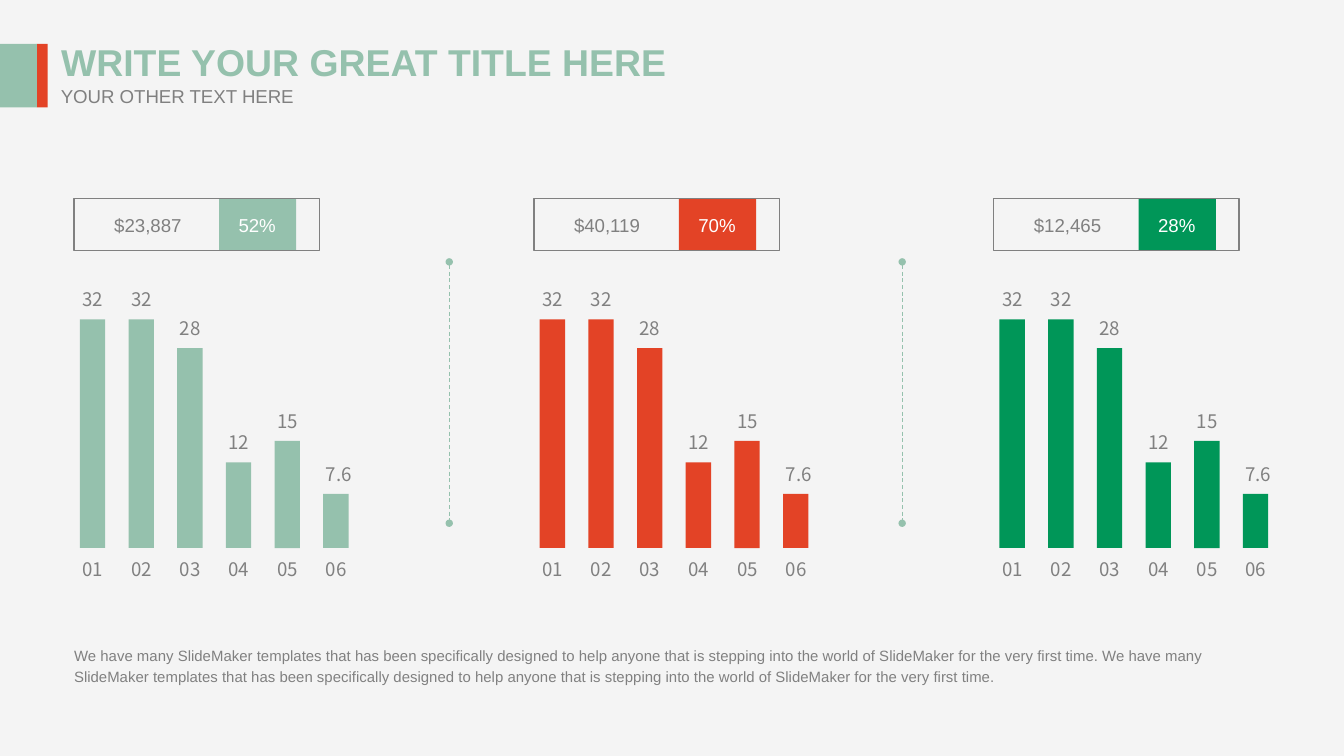
from lxml.etree import SubElement
from pptx import Presentation
from pptx.dml.color import RGBColor
from pptx.enum.dml import MSO_LINE_DASH_STYLE as Dash
from pptx.enum.shapes import MSO_CONNECTOR as Connector, MSO_SHAPE as Shape
from pptx.enum.text import MSO_ANCHOR as Anchor, MSO_AUTO_SIZE as AutoSize, PP_ALIGN as Align
from pptx.oxml.ns import qn
from pptx.util import Cm, Pt

SAGE = RGBColor(0x95, 0xC1, 0xAD)
RED = RGBColor(0xE3, 0x43, 0x26)
GREEN = RGBColor(0x00, 0x96, 0x58)
GRAY = RGBColor(0x80, 0x80, 0x80)
WHITE = RGBColor(0xFF, 0xFF, 0xFF)
BACKGROUND = RGBColor(0xF4, 0xF4, 0xF4)

TITLE = "WRITE YOUR GREAT TITLE HERE"
SUBTITLE = "YOUR OTHER TEXT HERE"
NOTE = (
    "We have many SlideMaker templates that has been specifically designed to help anyone "
    "that is stepping into the world of SlideMaker for the very first time. "
    "We have many SlideMaker templates that has been specifically designed to help anyone "
    "that is stepping into the world of SlideMaker for the very first time."
)
PANELS = [("$23,887", "52%", SAGE), ("$40,119", "70%", RED), ("$12,465", "28%", GREEN)]
BARS = [("01", 32), ("02", 32), ("03", 28), ("04", 12), ("05", 15), ("06", 7.6)]

TITLE_FONT = {"name": "Arial", "size": Pt(20), "bold": True}
BODY_FONT = {"name": "Arial", "size": Pt(10)}
NOTE_FONT = {"name": "Arial", "size": Pt(8)}
LABEL_FONT = {"name": "Noto Sans CJK SC", "size": Pt(10)}
NO_MARGINS = dict.fromkeys(("margin_left", "margin_top", "margin_right", "margin_bottom"), 0)

# Layout, in centimetres
MARGIN, PANEL_PITCH = 1.4, 8.69
BADGE_TOP, BADGE_HEIGHT = 3.75, 0.99
BAR_INSET, BAR_PITCH, BAR_WIDTH = 0.11, 0.92, 0.48
BASELINE, UNIT_HEIGHT = 10.36, 0.135
VALUE_GAP, CATEGORY_GAP = 0.59, 0.18
DIVIDERS, DIVIDER_TOP, DIVIDER_BOTTOM = (8.49, 17.05), 4.95, 9.89
ACCENTS = [(0.7, 0.2, RED), (0, 0.7, SAGE)]


def set_attributes(target, values):
    for name, value in values.items():
        setattr(target, name, value)


def write(shape, text, font, color, align=Align.LEFT, wrap=False, **frame_format):
    frame = shape.text_frame
    set_attributes(frame, {"word_wrap": wrap, "auto_size": AutoSize.SHAPE_TO_FIT_TEXT,
                           "vertical_anchor": Anchor.TOP, **frame_format})
    frame.text = text
    paragraph = frame.paragraphs[0]
    paragraph.alignment = align
    run_font = paragraph.runs[0].font
    set_attributes(run_font, font)
    run_font.color.rgb = color
    return paragraph


def add_text(slide, box, *content, **options):
    shape = slide.shapes.add_textbox(*map(Cm, box))
    return write(shape, *content, **options)


def add_rectangle(shapes, box, fill=None, line=None):
    shape = shapes.add_shape(Shape.RECTANGLE, *map(Cm, box))
    shape.shadow.inherit = False
    if fill is None:
        shape.fill.background()
    else:
        shape.fill.solid()
        shape.fill.fore_color.rgb = fill
    if line is None:
        shape.line.fill.background()
    else:
        shape.line.color.rgb = line
        shape.line.width = Pt(0.75)


def add_divider(slide, x):
    divider = slide.shapes.add_connector(
        Connector.STRAIGHT, Cm(x), Cm(DIVIDER_TOP), Cm(x), Cm(DIVIDER_BOTTOM))
    divider.line.color.rgb = SAGE
    set_attributes(divider.line, {"width": Pt(0.5), "dash_style": Dash.DASH})
    line = divider.line._get_or_add_ln()
    for end in ("a:headEnd", "a:tailEnd"):
        SubElement(line, qn(end), type="oval", w="sm", len="sm")
    SubElement(divider._element.spPr, qn("a:effectLst"))


def add_bars(slide, left, color):
    for index, (category, value) in enumerate(BARS):
        x = left + BAR_INSET + index * BAR_PITCH
        height = value * UNIT_HEIGHT
        top = BASELINE - height
        add_rectangle(slide.shapes, (x, top, BAR_WIDTH, height), color)
        labels = [(category, BASELINE + CATEGORY_GAP), (str(value), top - VALUE_GAP)]
        for text, label_top in labels:
            width = 0.5 if "." in text else 0.4
            add_text(slide, (x + 0.05, label_top, width, 0.43), text, LABEL_FONT, GRAY,
                     **NO_MARGINS)


def add_badge(slide, left, amount, percent, color):
    add_rectangle(slide.shapes, (left + 2.74, BADGE_TOP, 1.46, BADGE_HEIGHT), color)
    text_top = BADGE_TOP + 0.16
    add_text(slide, (left + 0.51, text_top, 1.78, 0.69), amount, BODY_FONT, GRAY)
    add_text(slide, (left + 2.85, text_top, 1.22, 0.69), percent, BODY_FONT, WHITE,
             align=Align.CENTER)
    add_rectangle(slide.shapes, (left, BADGE_TOP, 4.64, BADGE_HEIGHT), line=GRAY)


def main():
    presentation = Presentation()
    set_attributes(presentation, {"slide_width": Cm(25.4), "slide_height": Cm(14.29)})
    slide = presentation.slides.add_slide(presentation.slide_layouts[5])
    slide.background.fill.solid()
    slide.background.fill.fore_color.rgb = BACKGROUND

    title = slide.shapes.title
    set_attributes(title, {"left": Cm(0.9), "top": Cm(0.61),
                           "width": Cm(12.01), "height": Cm(1.09)})
    write(title, TITLE, TITLE_FONT, SAGE)
    add_text(slide, (0.9, 1.47, 4.93, 0.69), SUBTITLE, BODY_FONT, GRAY)
    accent = slide.shapes.add_group_shape()
    for left, width, color in ACCENTS:
        add_rectangle(accent.shapes, (left, 0.83, width, 1.2), color)

    for index, (amount, percent, color) in enumerate(PANELS):
        left = MARGIN + index * PANEL_PITCH
        add_badge(slide, left, amount, percent, color)
        add_bars(slide, left, color)
    for x in DIVIDERS:
        add_divider(slide, x)

    note = add_text(slide, (MARGIN, 12.15, 22.6, 0.81), NOTE, NOTE_FONT, GRAY,
                    wrap=True, **NO_MARGINS)
    note.line_spacing = 1.2
    presentation.save("out.pptx")


if __name__ == "__main__":
    main()
